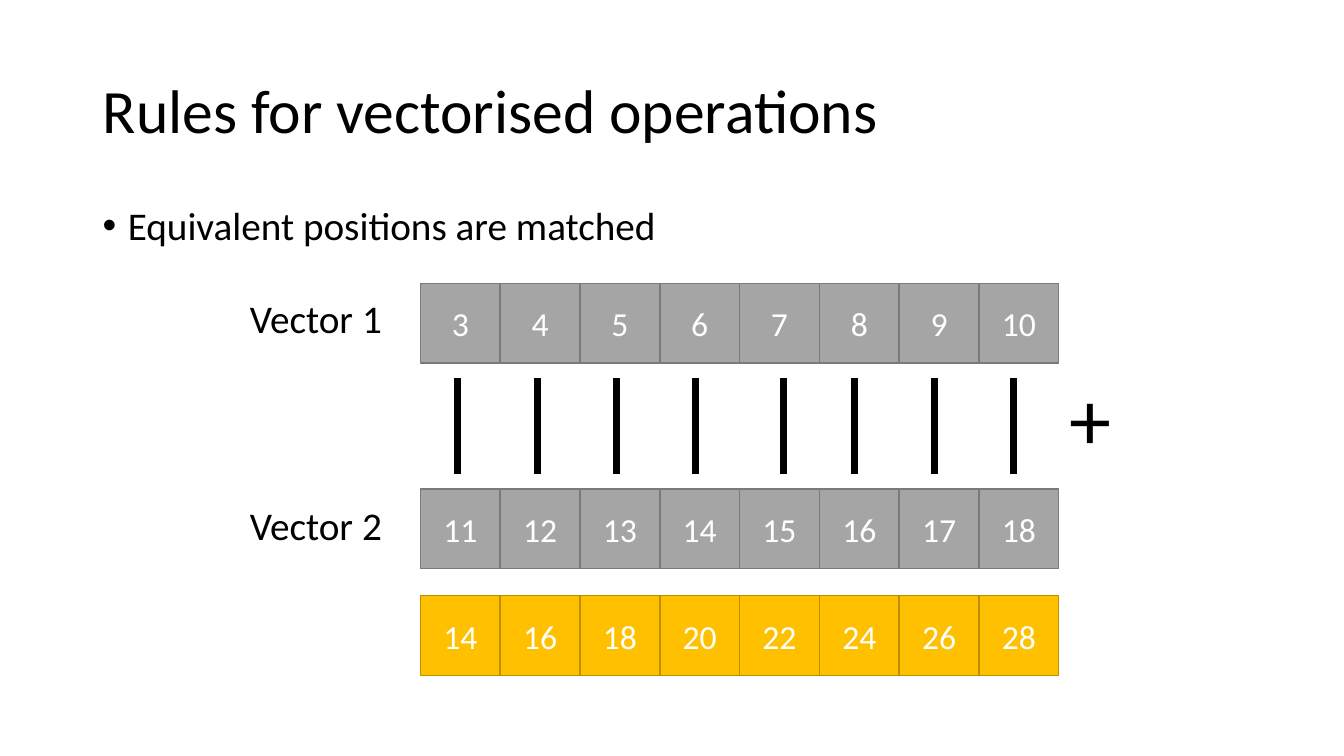
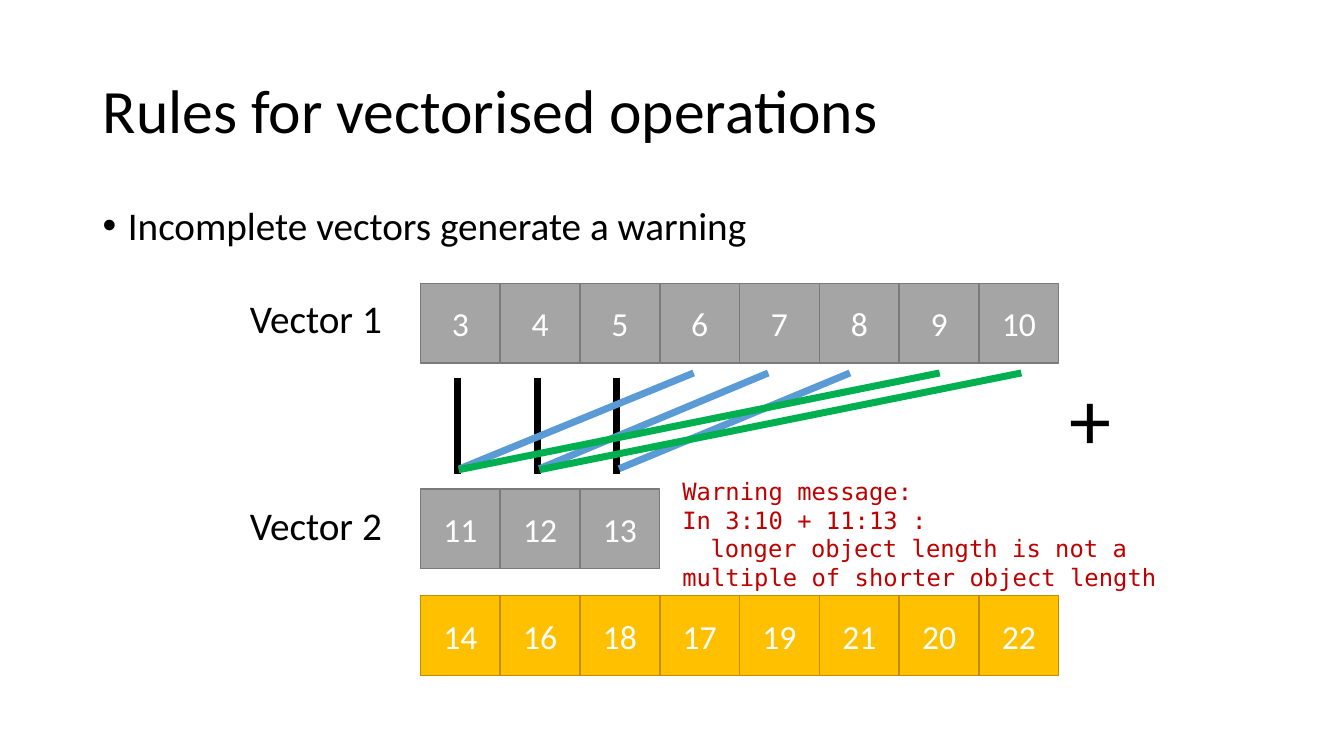
from itertools import cycle

from lxml.etree import SubElement
from pptx import Presentation
from pptx.dml.color import RGBColor
from pptx.enum.shapes import MSO_CONNECTOR as Connector, MSO_SHAPE as Shape
from pptx.enum.text import MSO_ANCHOR as Anchor, PP_ALIGN as Align
from pptx.oxml.ns import qn
from pptx.util import Inches, Pt

BLACK, WHITE, RED = "000000", "FFFFFF", "C00000"
BLUE, GREEN = "5B9BD5", "00B050"
GREY_CELL = ("A5A5A5", "7A7A7A")
GOLD_CELL = ("FFC000", "BD8E00")
BODY_FONT, CODE_FONT = "Calibri", "DejaVu Sans Mono"

CELL = 0.79
ROW_LEFT, CELL_PITCH = 4.17, 0.7915
VECTOR_1_TOP, VECTOR_2_TOP, RESULT_TOP = 2.81, 4.85, 5.91
MATCH_LEFT, MATCH_PITCH = 4.54, 0.7875
MATCH_TOP, MATCH_BOTTOM = 3.75, 4.7
MATCH_SHIFT = {4: 0.08}

VECTOR_1 = range(3, 11)
WARNING = [
    ("Warning message:", 0),
    ("In 3:10 + 11:13 :", 0),
    ("longer object length is not a multiple of shorter object length", 0.28),
]


def color(hex_value):
    return RGBColor.from_string(hex_value)


def set_text(paragraph, text, size=28, font=BODY_FONT, fill=BLACK, align=Align.LEFT,
             line_spacing=None, before=0, margin=0, indent=0, bullet=None):
    paragraph.alignment = align
    paragraph.space_before = Pt(before)
    if line_spacing:
        paragraph.line_spacing = line_spacing
    properties = paragraph._p.get_or_add_pPr()
    properties.set("marL", str(Inches(margin)))
    properties.set("indent", str(Inches(indent)))
    if bullet:
        SubElement(properties, qn("a:buFont"), typeface="Arial")
        SubElement(properties, qn("a:buChar"), char=bullet)
    run = paragraph.add_run()
    run.text = text
    run.font.size = Pt(size)
    run.font.name = font
    run.font.color.rgb = color(fill)


def add_text_box(slide, left, top, width, height, wrap=True, anchor=Anchor.TOP):
    box = slide.shapes.add_textbox(Inches(left), Inches(top), Inches(width), Inches(height))
    frame = box.text_frame
    frame.word_wrap = wrap
    frame.vertical_anchor = anchor
    return frame


def add_label(slide, text, left, top, width, height, size=28):
    frame = add_text_box(slide, left, top, width, height, wrap=False)
    set_text(frame.paragraphs[0], text, size=size)


def add_cell_row(slide, values, top, colors):
    fill, outline = colors
    for index, value in enumerate(values):
        left = ROW_LEFT + index * CELL_PITCH
        cell = slide.shapes.add_shape(
            Shape.RECTANGLE, Inches(left), Inches(top), Inches(CELL), Inches(CELL))
        cell.shadow.inherit = False
        cell.fill.solid()
        cell.fill.fore_color.rgb = color(fill)
        cell.line.color.rgb = color(outline)
        cell.line.width = Pt(1)
        cell.text_frame.vertical_anchor = Anchor.MIDDLE
        set_text(cell.text_frame.paragraphs[0], str(value), size=24, fill=WHITE,
                 align=Align.CENTER)


def add_line(slide, start, end, stroke=BLACK):
    line = slide.shapes.add_connector(
        Connector.STRAIGHT, *(Inches(value) for value in (*start, *end)))
    line.line.color.rgb = color(stroke)
    line.line.width = Pt(5)
    SubElement(line._element.spPr, qn("a:effectLst"))


def add_match_lines(slide, count):
    for index in range(count):
        x = MATCH_LEFT + index * MATCH_PITCH + MATCH_SHIFT.get(index, 0)
        add_line(slide, (x, MATCH_TOP), (x, MATCH_BOTTOM))


def add_warning(slide):
    frame = add_text_box(slide, 6.67, 4.68, 5, 1.25)
    for index, (text, indent) in enumerate(WARNING):
        paragraph = frame.add_paragraph() if index else frame.paragraphs[0]
        set_text(paragraph, text, size=17, font=CODE_FONT, fill=RED, indent=indent)


def add_vector_slide(presentation, rule, vector_2):
    """Add the title, the rule, both vectors and their sum, with vector_2 recycled."""
    slide = presentation.slides.add_slide(presentation.slide_layouts[6])
    title = add_text_box(slide, 0.92, 0.4, 11.5, 1.45, anchor=Anchor.MIDDLE)
    set_text(title.paragraphs[0], "Rules for vectorised operations", size=44,
             line_spacing=0.9)
    body = add_text_box(slide, 0.92, 2, 11.5, 0.6)
    set_text(body.paragraphs[0], rule, line_spacing=0.9, before=10,
             margin=0.25, indent=-0.25, bullet="•")

    add_cell_row(slide, VECTOR_1, VECTOR_1_TOP, GREY_CELL)
    add_cell_row(slide, vector_2, VECTOR_2_TOP, GREY_CELL)
    add_label(slide, "Vector 1", 2.38, 2.87, 1.53, 0.57)
    add_label(slide, "Vector 2", 2.38, 4.92, 1.53, 0.57)
    add_label(slide, "+", 10.51, 3.59, 0.62, 1.11, size=60)
    add_match_lines(slide, len(vector_2))
    sums = [first + second for first, second in zip(VECTOR_1, cycle(vector_2))]
    add_cell_row(slide, sums, RESULT_TOP, GOLD_CELL)
    return slide


def main():
    presentation = Presentation()
    presentation.slide_width = Inches(13.33)
    presentation.slide_height = Inches(7.5)

    add_vector_slide(presentation, "Equivalent positions are matched", range(11, 19))

    slide = add_vector_slide(
        presentation, "Incomplete vectors generate a warning", range(11, 14))
    for top_x, bottom_x in ((6.88, 4.56), (7.62, 5.35), (8.43, 6.14)):
        add_line(slide, (top_x, 3.7), (bottom_x, 4.65), BLUE)
    add_warning(slide)
    for top_x, bottom_x in ((9.32, 4.55), (10.13, 5.35)):
        add_line(slide, (top_x, 3.7), (bottom_x, 4.66), GREEN)

    presentation.save("out.pptx")


if __name__ == "__main__":
    main()
